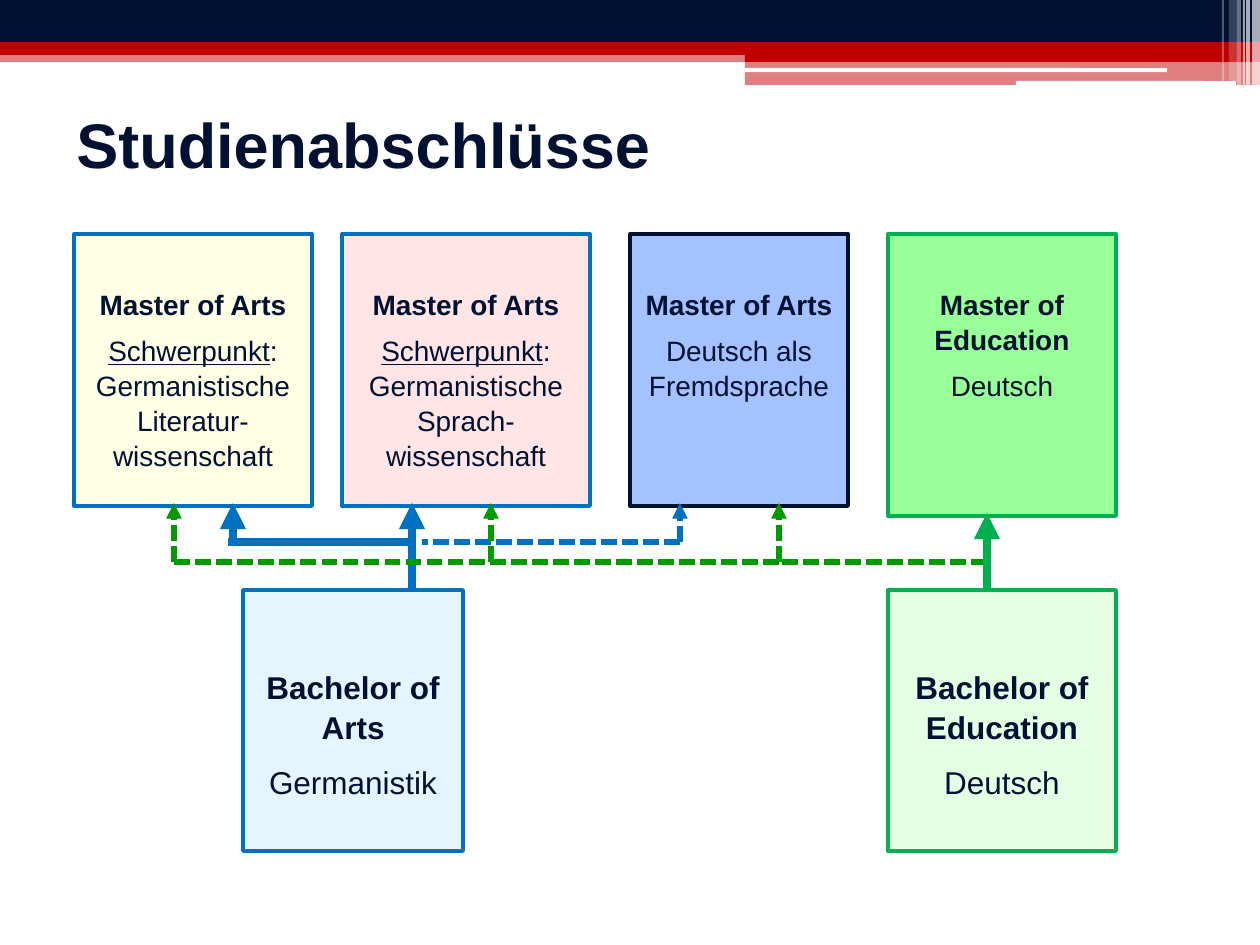
import lxml.etree
import pptx
import pptx.dml.color
import pptx.enum.shapes
import pptx.enum.text
import pptx.oxml.ns
import pptx.util

THEME = {
    "font": "Arial", "navy": "001132", "red": "C00000", "white": "FFFFFF",
    "blue": "0070C0", "green": "00B050", "dash_green": "009900",
    "cream": "FFFFCC", "rose": "FFCCCC", "periwinkle": "A3C2FF",
    "mint": "99FF99", "ice": "CCECFF", "pale_mint": "E5FFE5",
    "title": 36, "bachelor": 18, "master": 16,
    "border": 2.25, "thick": 5, "thin": 3, "leading": 1.05,
}
SHAPES = pptx.enum.shapes.MSO_SHAPE
CENTER = pptx.enum.text.PP_ALIGN.CENTER
LEFT = pptx.enum.text.PP_ALIGN.LEFT


def px(n):
    """Turn pixels into EMU."""
    return pptx.util.Emu(round(n * 914400 / 126))


def color(name):
    """Return the theme colour with this name."""
    return pptx.dml.color.RGBColor.from_string(THEME[name])


def set_values(obj, values):
    """Set attributes of an object from a dict."""
    for name, value in values.items():
        setattr(obj, name, value)


def child(parent, tag, **attrs):
    """Append a DrawingML element to a parent."""
    return lxml.etree.SubElement(parent, pptx.oxml.ns.qn(tag), attrs)


def add_block(s, box, fill, alpha=100, line=None, kind=SHAPES.RECTANGLE):
    """Add a filled shape with optional transparency and border."""
    sp = s.shapes.add_shape(kind, *map(px, box))
    sp.shadow.inherit = False
    sp.fill.solid()
    sp.fill.fore_color.rgb = color(fill)
    if alpha < 100:
        clr = sp.fill._xPr.find(".//" + pptx.oxml.ns.qn("a:srgbClr"))
        child(clr, "a:alpha", val=str(alpha * 1000))
    if line:
        sp.line.color.rgb = color(line)
        sp.line.width = pptx.util.Pt(THEME["border"])
    else:
        sp.line.fill.background()
    return sp


def add_text(tf, paragraphs, size, inset=6, gap=0, align=CENTER):
    """Write paragraphs of (text, format) runs into a text frame."""
    set_values(tf, {
        "word_wrap": True, "margin_top": px(inset),
        "vertical_anchor": pptx.enum.text.MSO_ANCHOR.TOP,
    })
    for i, runs in enumerate(paragraphs):
        p = tf.add_paragraph() if i else tf.paragraphs[0]
        set_values(p, {
            "alignment": align, "line_spacing": THEME["leading"],
            "space_before": pptx.util.Pt(gap if i else 0),
        })
        for text, values in runs:
            for j, part in enumerate(text.split("\n")):
                if j:
                    p.add_line_break()
                r = p.add_run()
                r.text = part
                set_values(r.font, {
                    "name": THEME["font"], "size": pptx.util.Pt(THEME[size]), **values})
                r.font.color.rgb = color("navy")


def add_line(s, start, end, line, width, dash=False, arrow=False):
    """Draw a straight line, dashed or with an arrowhead on request."""
    c = s.shapes.add_connector(
        pptx.enum.shapes.MSO_CONNECTOR.STRAIGHT, *map(px, start + end))
    c.line.color.rgb = color(line)
    c.line.width = pptx.util.Pt(THEME[width])
    ln = c.line._get_or_add_ln()
    if dash:
        child(ln, "a:prstDash", val="sysDash")
    if arrow:
        child(ln, "a:tailEnd", type="triangle")
    child(c._element.spPr, "a:effectLst")


def add_banner(s, box):
    """Draw the layered band along the top edge."""
    left, top, width, height = box
    split = 745
    rest = width - split
    bars = [
        (0, 50, width, 12, "red", 50),
        (0, 0, width, 42, "navy", 100),
        (0, 42, width, 13, "red", 100),
        (split, 49, rest, 13, "red", 100),
        (split, 61, rest, height - 61, "red", 50),
    ]
    for x, y, w, h, fill, alpha in bars:
        add_block(s, (left + x, top + y, w, h), fill, alpha)
    for x, y, w, h in [(split, 68, 422, 4), (1016, 81, 220, 5)]:
        add_block(s, (left + x, top + y, w, h), "white", kind=SHAPES.ROUNDED_RECTANGLE)
    stripes = [(1252, 8, height, 65), (1246, 4, height, 65), (1243, 2, height, 60),
               (1237, 4, height, 40), (1229, 8, 81, 20), (1222, 2, 81, 30)]
    for x, w, h, alpha in stripes:
        add_block(s, (left + x, top, w, h), "white", alpha)


def add_title(s, box, text):
    """Place the slide title."""
    tf = s.shapes.add_textbox(*map(px, box)).text_frame
    add_text(tf, [[(text, {"bold": True})]], "title", align=LEFT)


def add_degree(s, box, name, detail, fill, line, alpha=100, size="master", focus=None):
    """Draw one degree box with its bold name and its subject."""
    sp = add_block(s, box, fill, alpha, line)
    subject = [(detail, {})]
    if focus:
        subject.insert(0, (focus, {"underline": True}))
    inset, gap = (76, 9) if size == "bachelor" else (52, 6)
    add_text(sp.text_frame, [[(name, {"bold": True})], subject], size, inset, gap)


def add_degrees(s, box):
    """Place the master degrees above the bachelor degrees."""
    left, top, width, height = box
    arts, focus = "Master of Arts", "Schwerpunkt"
    right = width - 228
    masters = [
        (0, 238, 272, arts, ": Germanistische Literatur-\nwissenschaft", "cream", "blue", 49, focus),
        (268, 248, 272, arts, ": Germanistische\nSprach-\nwissenschaft", "rose", "blue", 50, focus),
        (556, 218, 272, arts, "Deutsch als Fremdsprache", "periwinkle", "navy", 100, None),
        (right, 228, 282, "Master of\nEducation", "Deutsch", "mint", "green", 100, None),
    ]
    for x, w, h, name, detail, fill, line, alpha, topic in masters:
        add_degree(s, (left + x, top, w, h), name, detail, fill, line, alpha, focus=topic)
    bachelors = [
        (169, 220, "Bachelor of Arts", "Germanistik", "ice", "blue", 50),
        (right, 228, "Bachelor of Education", "Deutsch", "pale_mint", "green", 100),
    ]
    for x, w, name, detail, fill, line, alpha in bachelors:
        add_degree(s, (left + x, top + height - 261, w, 261), name, detail,
                   fill, line, alpha, "bachelor")


def add_routes(s, box):
    """Draw the routes from the bachelor up to the master degrees."""
    left, top, width, height = box
    bottom, right = top + height, left + width
    blue_y, green_y = top + 39, top + 59
    arts_x, first_x, foreign_x = left + 238, left + 59, left + 506
    add_line(s, (arts_x, bottom), (arts_x, top), "blue", "thick", arrow=True)
    add_line(s, (arts_x, blue_y), (first_x - 5, blue_y), "blue", "thick")
    add_line(s, (first_x, blue_y), (first_x, top), "blue", "thick", arrow=True)
    add_line(s, (foreign_x, blue_y), (arts_x + 10, blue_y), "blue", "thin", dash=True)
    add_line(s, (foreign_x, blue_y), (foreign_x, top), "blue", "thin", dash=True, arrow=True)
    stops = [left, left + 317, left + 605]
    for start, end in [(stops[-1], left), (right, stops[-1])]:
        add_line(s, (start, green_y), (end, green_y), "dash_green", "thin", dash=True)
    for x in stops:
        add_line(s, (x, green_y), (x, top), "dash_green", "thin", dash=True, arrow=True)
    add_line(s, (right, bottom), (right, top + 10), "green", "thick", arrow=True)


def main():
    """Build and save the slide."""
    prs = pptx.Presentation()
    set_values(prs, {"slide_width": px(1260), "slide_height": px(945)})
    s = prs.slides.add_slide(prs.slide_layouts[6])
    add_banner(s, (0, 0, 1260, 85))
    add_degrees(s, (74, 234, 1042, 617))
    add_routes(s, (174, 503, 813, 87))
    add_title(s, (64, 96, 1143, 102), "Studienabschlüsse")
    prs.save("out.pptx")


if __name__ == "__main__":
    main()
